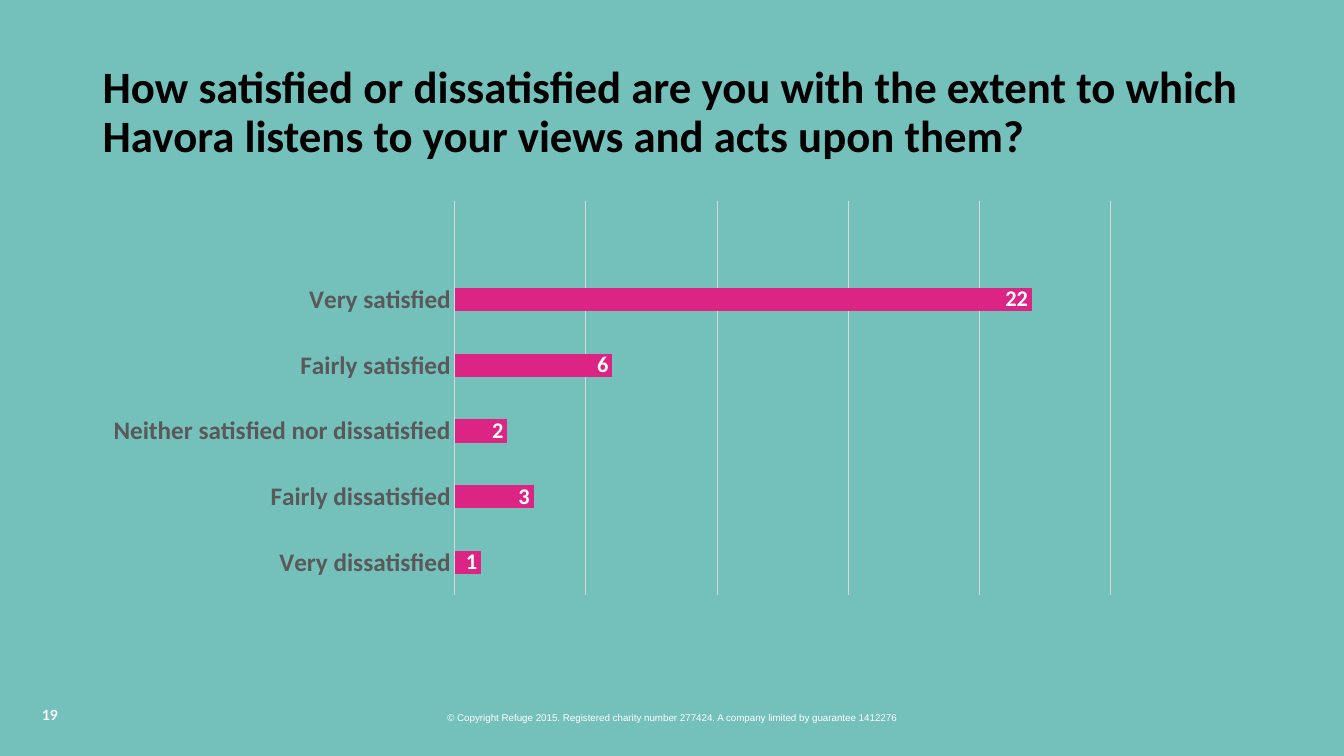
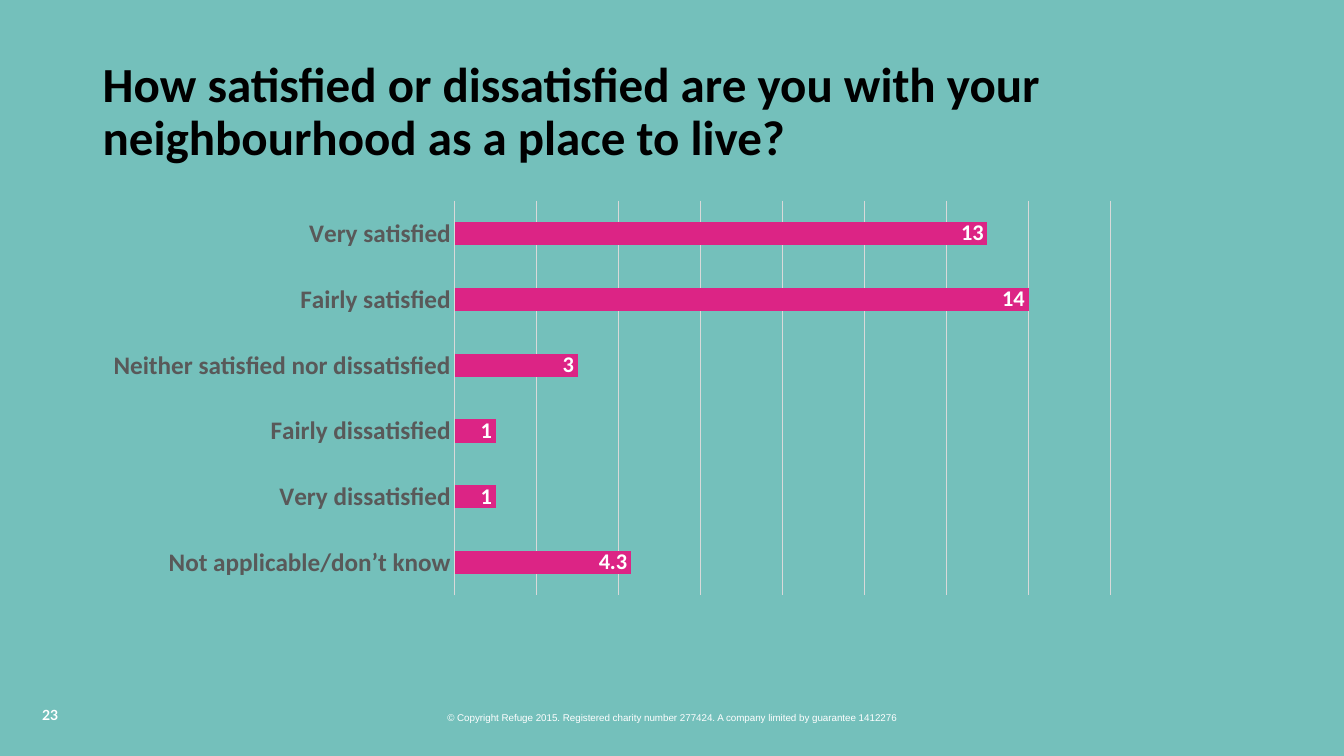
from dataclasses import dataclass

from pptx import Presentation
from pptx import util as u
from pptx.chart.data import CategoryChartData
from pptx.dml.color import RGBColor
from pptx.enum import chart as charts, text


@dataclass(frozen=True)
class Theme:
    """Colours, fonts and type sizes of the deck."""
    teal: str = "74C0BB"
    pink: str = "DC2485"
    black: str = "000000"
    white: str = "FFFFFF"
    grey: str = "595959"
    rule: str = "D9D9D9"
    body_font: str = "Calibri"
    footer_font: str = "Arial"
    number_font: str = "Lato"
    chart_size: int = 10
    category_size: int = 18
    value_size: int = 16
    footer_size: int = 7
    number_size: int = 10


THEME = Theme()
WIDTH, HEIGHT = 13.33, 7.5
COPYRIGHT = ("© Copyright Refuge 2015. Registered charity number 277424. "
             "A company limited by guarantee 1412276")
ANSWERS = ["Very dissatisfied", "Fairly dissatisfied", "Neither satisfied nor dissatisfied",
           "Fairly satisfied", "Very satisfied"]
SURVEY = [
    dict(number=19, title_size=32, maximum=25, step=5,
         title="How satisfied or dissatisfied are you with the extent to which "
               "Havora listens to your views and acts upon them?",
         answers=ANSWERS + [""], counts=[1, 3, 2, 6, 22, None]),
    dict(number=23, title_size=35, maximum=16, step=2,
         title="How satisfied or dissatisfied are you with your neighbourhood "
               "as a place to live?",
         answers=["Not applicable/don’t know"] + ANSWERS, counts=[4.3, 1, 1, 3, 14, 13]),
]


class SurveyDeck:
    """Builds survey pages in one style."""

    def __init__(self, theme):
        self.theme = theme
        self.deck = Presentation()
        self.deck.slide_width = u.Inches(WIDTH)
        self.deck.slide_height = u.Inches(HEIGHT)
        self.page = None

    def style(self, font, name, size, colour, bold=True):
        font.name, font.size, font.bold = name, u.Pt(size), bold
        font.color.rgb = RGBColor.from_string(colour)

    def rule(self, line):
        line.color.rgb = RGBColor.from_string(self.theme.rule)
        line.width = u.Pt(0.75)

    def text_box(self, words, area, name, size, colour, bold=True):
        box = self.page.shapes.add_textbox(*map(u.Inches, area))
        box.text_frame.word_wrap = True
        box.text_frame.text = words
        para = box.text_frame.paragraphs[0]
        self.style(para.runs[0].font, name, size, colour, bold)
        return box.text_frame, para

    def start_page(self, number):
        theme = self.theme
        self.page = self.deck.slides.add_slide(self.deck.slide_layouts[6])
        fill = self.page.background.fill
        fill.solid()
        fill.fore_color.rgb = RGBColor.from_string(theme.teal)
        _, para = self.text_box(COPYRIGHT, (0, 7.01, WIDTH, 0.22), theme.footer_font,
                                theme.footer_size, theme.white, False)
        para.alignment = text.PP_ALIGN.CENTER
        self.text_box(str(number), (0.32, 6.96, 3, 0.4), theme.number_font,
                      theme.number_size, theme.white)

    def title(self, words, size):
        frame, para = self.text_box(words, (0.92, 0.4, 11.65, 1.45), self.theme.body_font,
                                    size, self.theme.black)
        frame.vertical_anchor = text.MSO_ANCHOR.MIDDLE
        para.line_spacing = 0.9

    def bar_chart(self, answers, counts, maximum, step):
        theme = self.theme
        data = CategoryChartData()
        data.categories = answers
        data.add_series("Series 1", counts)
        area = map(u.Inches, (0.92, 1.91, 10.3, 4.08))
        chart = self.page.shapes.add_chart(charts.XL_CHART_TYPE.BAR_CLUSTERED, *area, data).chart
        chart.has_title = chart.has_legend = False
        self.style(chart.font, theme.body_font, theme.chart_size, theme.black, False)

        category_axis = chart.category_axis
        category_axis.major_tick_mark = charts.XL_TICK_MARK.NONE
        self.style(category_axis.tick_labels.font, theme.body_font,
                   theme.category_size, theme.grey)
        self.rule(category_axis.format.line)

        value_axis = chart.value_axis
        value_axis.visible = False
        value_axis.minimum_scale, value_axis.maximum_scale = 0, maximum
        value_axis.major_unit = step
        value_axis.has_major_gridlines = True
        self.rule(value_axis.major_gridlines.format.line)

        plot = chart.plots[0]
        plot.gap_width = 182
        plot.vary_by_categories = False
        bars = plot.series[0]
        bars.format.fill.solid()
        bars.format.fill.fore_color.rgb = RGBColor.from_string(theme.pink)
        labels = bars.data_labels
        labels.show_value = True
        labels.position = charts.XL_LABEL_POSITION.INSIDE_END
        self.style(labels.font, theme.body_font, theme.value_size, theme.white)


def main():
    survey = SurveyDeck(THEME)
    for question in SURVEY:
        survey.start_page(question["number"])
        survey.title(question["title"], question["title_size"])
        survey.bar_chart(question["answers"], question["counts"],
                         question["maximum"], question["step"])
    survey.deck.save("out.pptx")


if __name__ == "__main__":
    main()
